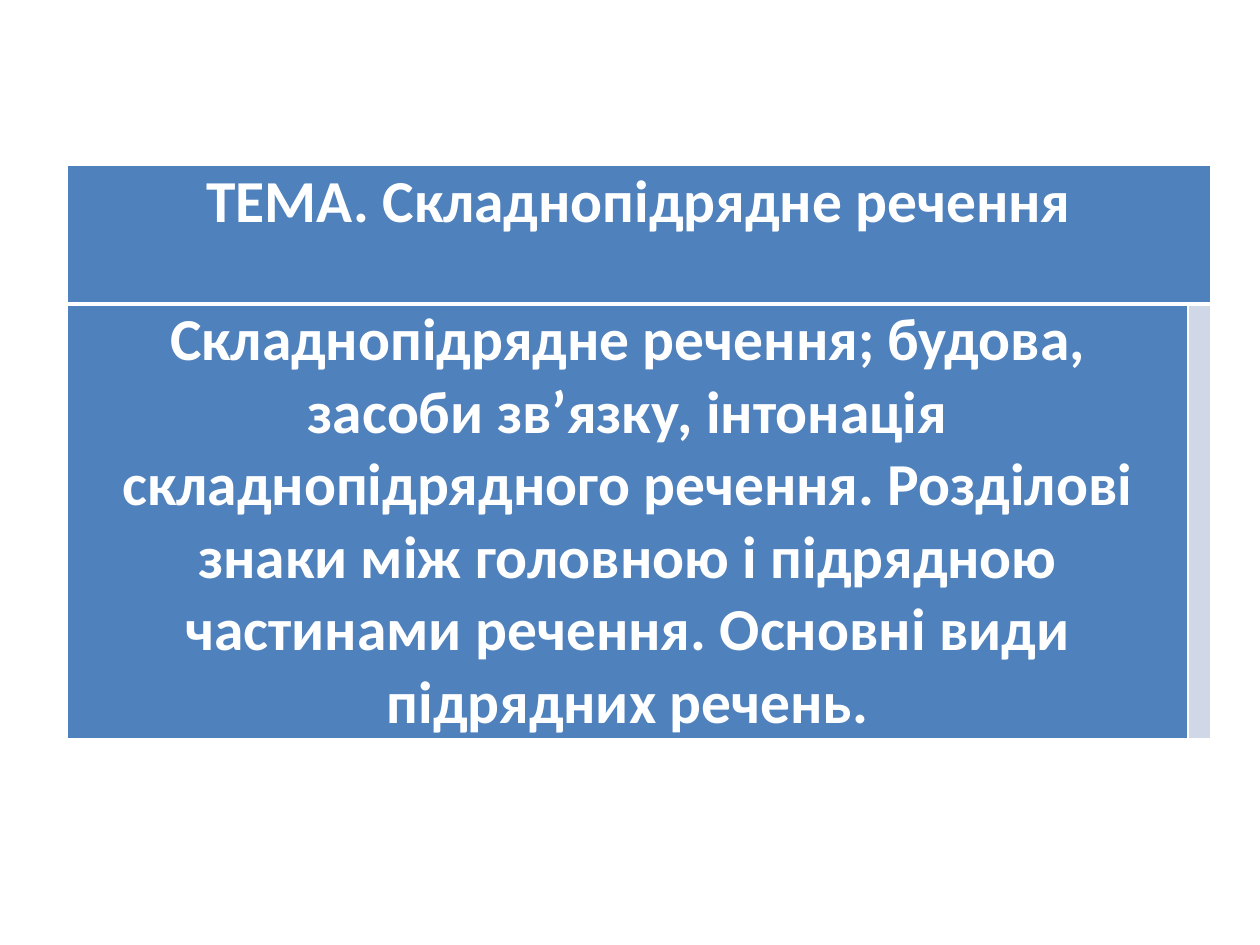
"""Build a lesson-topic slide with a two-row table."""
from dataclasses import dataclass

import lxml.etree
import pptx
import pptx.dml.color
import pptx.enum.text
import pptx.oxml.ns
import pptx.util

Pt = pptx.util.Pt
Color = pptx.dml.color.RGBColor


@dataclass(frozen=True)
class Theme:
    """Colours, font and type size of the slide."""
    accent: str = "4F81BD"
    pale: str = "D0D8E8"
    light: str = "FFFFFF"
    font: str = "Calibri"
    size: float = 34


@dataclass(frozen=True)
class TopicCell:
    """Place, wording, fill and bordering of one table cell."""
    row: int
    column: int
    text: str
    fill: str
    top: float = 1
    bottom: float = 1


THEME = Theme()
COLUMN_WIDTHS = (640.8, 7.2)
ROW_HEIGHTS = (79.2, 247)
CELLS = (
    TopicCell(0, 0, "ТЕМА. Складнопідрядне речення", THEME.accent, bottom=3),
    TopicCell(
        1, 0,
        "Складнопідрядне речення; будова, засоби зв’язку, інтонація "
        "складнопідрядного речення. Розділові знаки між головною і підрядною "
        "частинами речення. Основні види підрядних речень.",
        THEME.accent, top=3,
    ),
    TopicCell(1, 1, "", THEME.pale, top=3),
)


def apply_format(target: object, values: dict[str, object]) -> None:
    """Set each named attribute on the target."""
    for name, value in values.items():
        setattr(target, name, value)


def add_borders(cell: object, topic: TopicCell) -> None:
    """Draw solid light borders ahead of the cell fill."""
    properties = cell._tc.get_or_add_tcPr()
    widths = {"lnL": 1, "lnR": 1, "lnT": topic.top, "lnB": topic.bottom}
    for index, (side, width) in enumerate(widths.items()):
        line = lxml.etree.Element(pptx.oxml.ns.qn(f"a:{side}"), w=str(Pt(width)))
        fill = lxml.etree.SubElement(line, pptx.oxml.ns.qn("a:solidFill"))
        lxml.etree.SubElement(fill, pptx.oxml.ns.qn("a:srgbClr"), val=THEME.light)
        properties.insert(index, line)


def fill_cell(cell: object, topic: TopicCell) -> None:
    """Write and format one table cell."""
    apply_format(cell, {
        "margin_left": Pt(5), "margin_right": Pt(5),
        "margin_top": Pt(0), "margin_bottom": Pt(0),
    })
    cell.fill.solid()
    cell.fill.fore_color.rgb = Color.from_string(topic.fill)
    add_borders(cell, topic)
    para = cell.text_frame.paragraphs[0]
    para.alignment = pptx.enum.text.PP_ALIGN.CENTER
    if topic.text:
        span = para.add_run()
        span.text = topic.text
        apply_format(span.font, {"name": THEME.font, "size": Pt(THEME.size), "bold": True})
        span.font.color.rgb = Color.from_string(THEME.light)


def main() -> None:
    """Create the deck and save it."""
    deck = pptx.Presentation()
    apply_format(deck, {"slide_width": Pt(720), "slide_height": Pt(540)})
    page = deck.slides.add_slide(deck.slide_layouts[6])
    table = page.shapes.add_table(
        len(ROW_HEIGHTS), len(COLUMN_WIDTHS), Pt(38.2), Pt(94.6),
        Pt(sum(COLUMN_WIDTHS)), Pt(sum(ROW_HEIGHTS)),
    ).table
    for column, width in zip(table.columns, COLUMN_WIDTHS):
        column.width = Pt(width)
    for row, height in zip(table.rows, ROW_HEIGHTS):
        row.height = Pt(height)
    table.cell(0, 0).merge(table.cell(0, 1))
    for topic in CELLS:
        fill_cell(table.cell(topic.row, topic.column), topic)


    deck.save("out.pptx")


if __name__ == "__main__":
    main()
